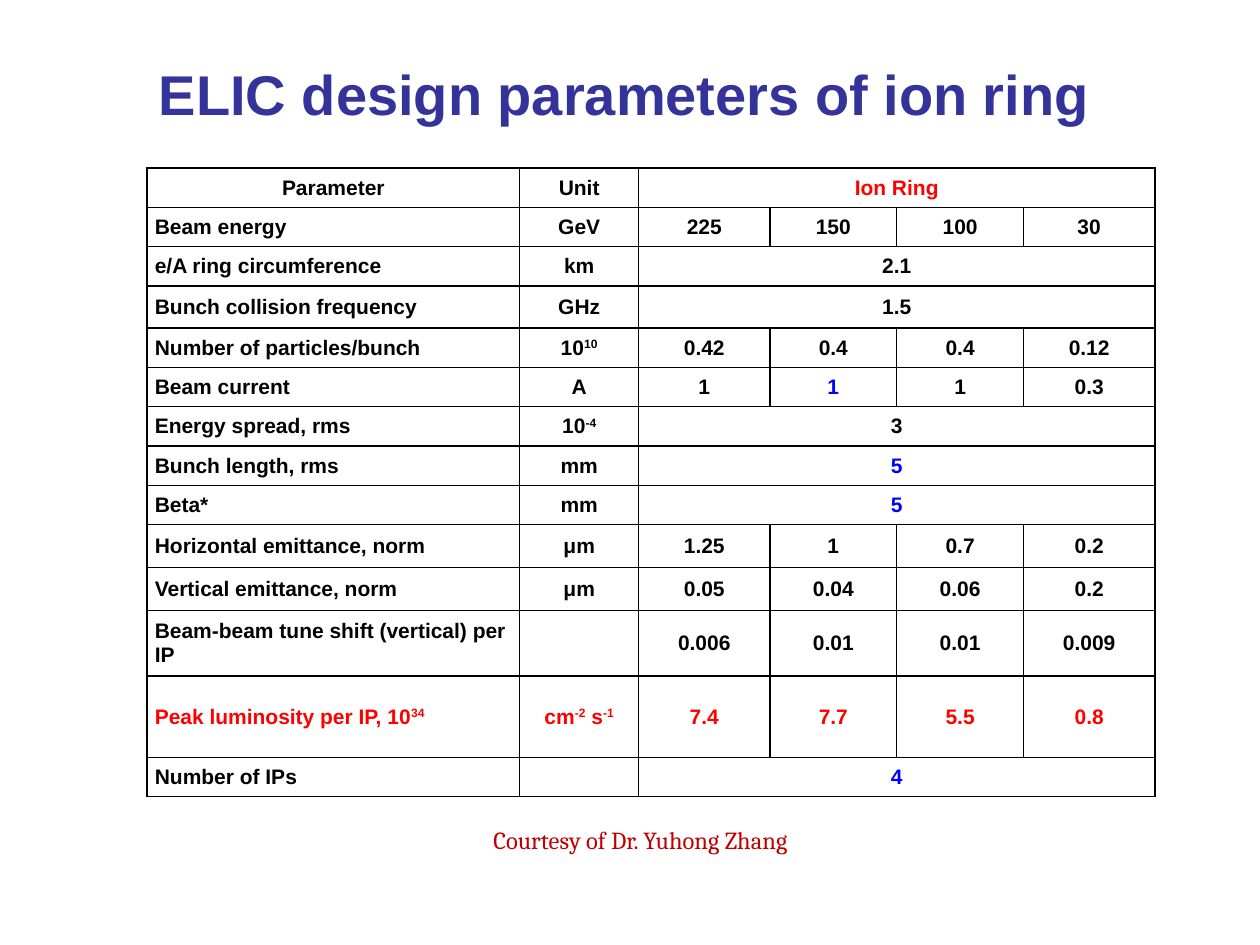
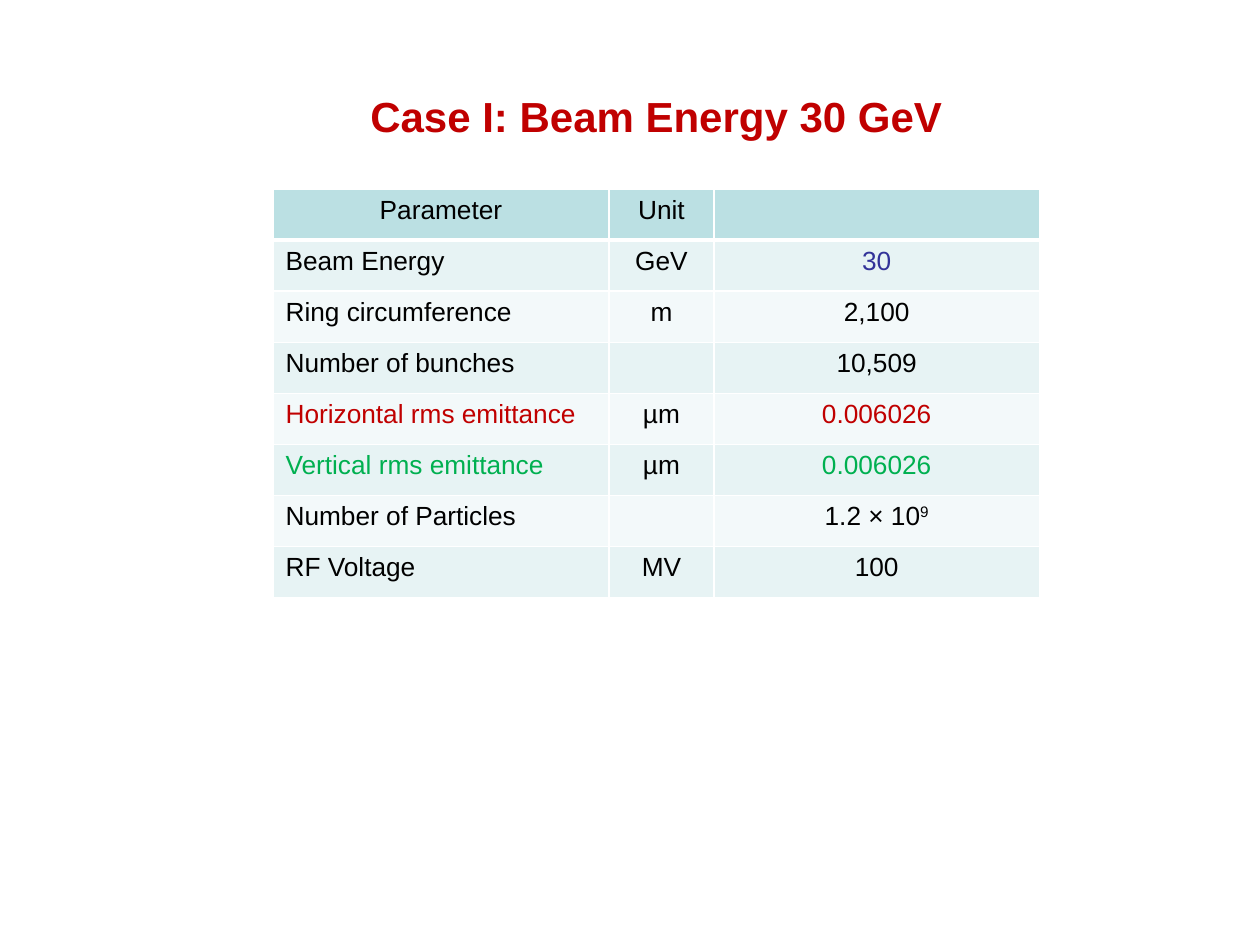
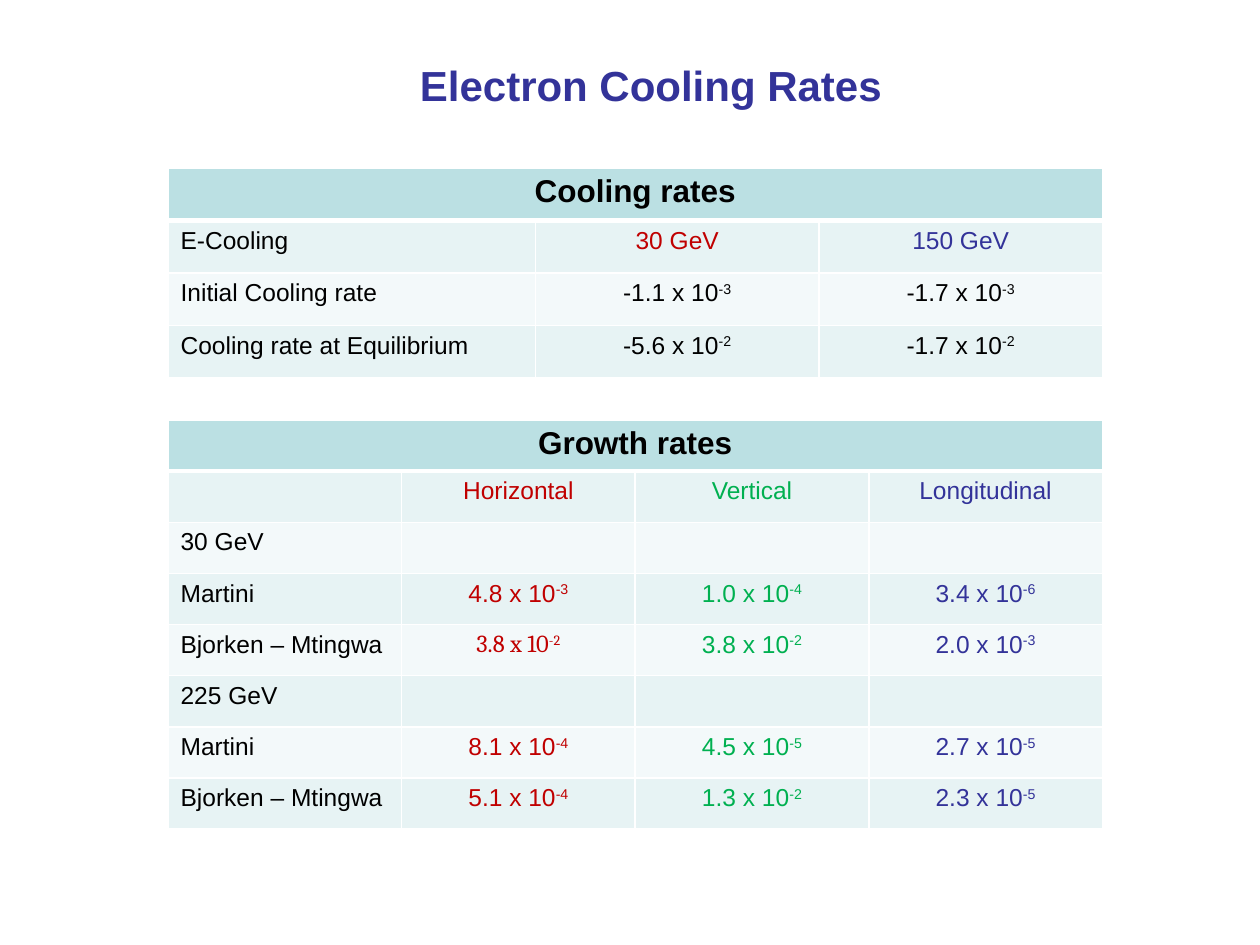
from lxml import etree
from pptx import Presentation
from pptx.dml.color import RGBColor
from pptx.enum import text
from pptx.oxml import ns
from pptx.util import Pt

HUES = {"ink": "000000", "navy": "333399", "wine": "C00000", "green": "00B050",
        "red": "FF0000", "blue": "0000FF", "white": "FFFFFF",
        "head": "BBE0E3", "odd": "E7F3F4", "even": "F3F9FA"}
SANS, SERIF = "Arial", "Cambria"

# A cell is text or (text, colour[, font]); text between carets is raised.
# The last cell of a short row spans the remaining columns.
RING = [
    ["Parameter", "Unit", ("Ion Ring", "red")],
    ["Beam energy", "GeV", "225", "150", "100", "30"],
    ["e/A ring circumference", "km", "2.1"],
    ["Bunch collision frequency", "GHz", "1.5"],
    ["Number of particles/bunch", "10^10^", "0.42", "0.4", "0.4", "0.12"],
    ["Beam current", "A", "1", ("1", "blue"), "1", "0.3"],
    ["Energy spread, rms", "10^-4^", "3"],
    ["Bunch length, rms", "mm", ("5", "blue")],
    ["Beta*", "mm", ("5", "blue")],
    ["Horizontal emittance, norm", "μm", "1.25", "1", "0.7", "0.2"],
    ["Vertical emittance, norm", "μm", "0.05", "0.04", "0.06", "0.2"],
    ["Beam-beam tune shift (vertical) per IP", "", "0.006", "0.01", "0.01", "0.009"],
    [(part, "red") for part in
     ("Peak luminosity per IP, 10^34^", "cm^-2^ s^-1^", "7.4", "7.7", "5.5", "0.8")],
    ["Number of IPs", "", ("4", "blue")],
]
RING_ROWS = [22.5] * 3 + [24] + [22.5] * 5 + [24.5, 24.5, 37.5, 46.5, 22.5]

CASE = [
    ["Parameter", "Unit", ""],
    ["Beam Energy", "GeV", ("30", "navy")],
    ["Ring circumference", "m", "2,100"],
    ["Number of bunches", "", "10,509"],
    [("Horizontal rms emittance", "wine"), "µm", ("0.006026", "wine")],
    [("Vertical rms emittance", "green"), "µm", ("0.006026", "green")],
    ["Number of Particles", "", "1.2 × 10^9^"],
    ["RF Voltage", "MV", "100"],
]

COOL = [
    ["Cooling rates"],
    ["E-Cooling", ("30 GeV", "wine"), ("150 GeV", "navy")],
    ["Initial Cooling rate", "-1.1 x 10^-3^", "-1.7 x 10^-3^"],
    ["Cooling rate at Equilibrium", "-5.6 x 10^-2^", "-1.7 x 10^-2^"],
]

GROWTH = [
    ["Growth rates"],
    ["", "Horizontal", "Vertical", "Longitudinal"],
    ["30 GeV", "", "", ""],
    ["Martini", "4.8 x 10^-3^", "1.0 x 10^-4^", "3.4 x 10^-6^"],
    ["Bjorken – Mtingwa", ("3.8 x 10^-2^", "wine", SERIF), "3.8 x 10^-2^", "2.0 x 10^-3^"],
    ["225 GeV", "", "", ""],
    ["Martini", "8.1 x 10^-4^", "4.5 x 10^-5^", "2.7 x 10^-5^"],
    ["Bjorken – Mtingwa", "5.1 x 10^-4^", "1.3 x 10^-2^", "2.3 x 10^-5^"],
]
GROWTH_HUES = ["ink", "wine", "green", "navy"]


def rgb(hue):
    return RGBColor.from_string(HUES[hue])


def write(frame, words, size, hue, font=SANS, bold=False, center=True):
    """Fill a text frame, raising the parts between carets."""
    para = frame.paragraphs[0]
    para.alignment = text.PP_ALIGN.CENTER if center else text.PP_ALIGN.LEFT
    for num, part in enumerate(words.split("^")):
        if not part:
            continue
        run = para.add_run()
        run.text = part
        run.font.size, run.font.name, run.font.bold = Pt(size), font, bold
        run.font.color.rgb = rgb(hue)
        if num % 2:
            run._r.get_or_add_rPr().set("baseline", "30000")


def place(shape, left, top, width, height):
    shape.left, shape.top, shape.width, shape.height = map(Pt, (left, top, width, height))
    shape.text_frame.word_wrap = True
    shape.text_frame.auto_size = text.MSO_AUTO_SIZE.NONE


def new_slide(deck, title, box, size, hue):
    slide = deck.slides.add_slide(deck.slide_layouts[5])
    place(slide.shapes.title, *box)
    slide.shapes.title.text_frame.vertical_anchor = text.MSO_ANCHOR.MIDDLE
    write(slide.shapes.title.text_frame, title, size, hue, bold=True)
    return slide


def edge(cell, side, hue, width):
    line = etree.SubElement(cell._tc.get_or_add_tcPr(), ns.qn("a:ln" + side), w=str(Pt(width)))
    fill = etree.SubElement(line, ns.qn("a:solidFill"))
    etree.SubElement(fill, ns.qn("a:srgbClr"), val=HUES[hue])


def add_grid(slide, rows, left, top, cols, highs, size, hues=None, plain=False, big=None):
    """Draw a table: plain is ruled in black, otherwise banded; big sizes a bold heading."""
    frame = slide.shapes.add_table(len(rows), len(cols), Pt(left), Pt(top),
                                   Pt(sum(cols)), Pt(sum(highs)))
    table = frame.table
    table.first_row = table.horz_banding = False
    for col, width in zip(table.columns, cols):
        col.width = Pt(width)
    for num, (row, high) in enumerate(zip(rows, highs)):
        table.rows[num].height = Pt(high)
        for pos in range(len(cols)):
            cell = table.cell(num, pos)
            for side in "LRTB":
                thick = not plain and (num, side) in ((0, "B"), (1, "T"))
                edge(cell, side, "ink" if plain else "white", 3 if thick else 1)
            if plain:
                cell.fill.background()
                cell.vertical_anchor = text.MSO_ANCHOR.MIDDLE
                cell.margin_left = cell.margin_right = Pt(4.5)
                cell.margin_top = cell.margin_bottom = 0
            else:
                cell.fill.solid()
                cell.fill.fore_color.rgb = rgb("head" if num == 0 else "odd" if num % 2 else "even")
            if pos >= len(row):
                continue
            item = row[pos]
            if isinstance(item, str):
                item = (item, hues[pos] if hues else "ink")
            head = big and num == 0
            write(cell.text_frame, item[0], big if head else size, *item[1:],
                  bold=bool(plain or head), center=num == 0 or pos > 0)
        if len(row) < len(cols):
            table.cell(num, len(row) - 1).merge(table.cell(num, len(cols) - 1))


def main():
    deck = Presentation()
    deck.slide_width, deck.slide_height = Pt(720), Pt(540)

    slide = new_slide(deck, "ELIC design parameters of ion ring", (54, 30, 606, 46), 32, "navy")
    add_grid(slide, RING, 84, 96, [213, 68, 75, 72.5, 72.5, 75], RING_ROWS, 12, plain=True)
    note = slide.shapes.add_textbox(0, 0, 0, 0)
    place(note, 252, 468, 228, 24.5)
    write(note.text_frame, "Courtesy of Dr. Yuhong Zhang", 14, "wine", SERIF)

    slide = new_slide(deck, "Case I: Beam Energy 30 GeV", (174, 48, 402, 36), 24, "wine")
    add_grid(slide, CASE, 156, 108, [192, 60, 186], [29.2] * len(CASE), 15)

    slide = new_slide(deck, "Electron Cooling Rates", (210, 30, 324, 36.5), 24, "navy")
    add_grid(slide, COOL, 96, 96, [210, 162, 162], [30] * len(COOL), 14, big=18)
    add_grid(slide, GROWTH, 96, 240, [133.5] * 4, [29.25] * len(GROWTH), 14, GROWTH_HUES, big=18)

    deck.save("out.pptx")


if __name__ == "__main__":
    main()
